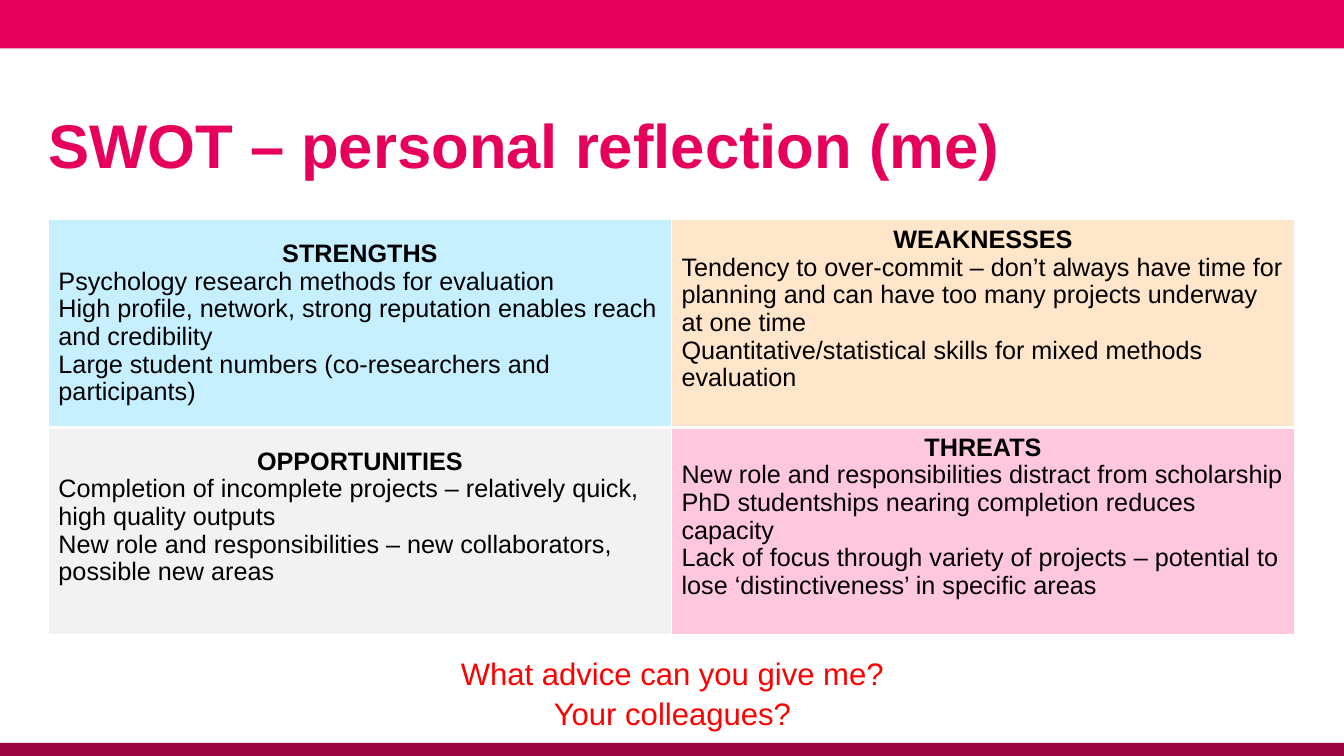
from dataclasses import dataclass

from lxml.etree import SubElement
from pptx import Presentation
from pptx.dml.color import RGBColor
from pptx.enum.shapes import MSO_SHAPE
from pptx.enum.text import MSO_ANCHOR, MSO_AUTO_SIZE, PP_ALIGN
from pptx.oxml.ns import qn
from pptx.slide import Slide
from pptx.table import _Cell
from pptx.util import Inches, Pt

COLOURS = {
    "pink": "E6005B",
    "maroon": "9E043D",
    "black": "000000",
    "white": "FFFFFF",
    "red": "FF0000",
    "blue tint": "C6F0FF",
    "orange tint": "FFE5C9",
    "grey tint": "F2F2F2",
    "pink tint": "FFC7DD",
}
SLIDE_WIDTH = 13.33
LEFT, CONTENT_WIDTH = 0.48, 12.36
QUADRANT_HEIGHT = 2.06


@dataclass
class Band:
    top: float
    height: float
    colour: str


@dataclass
class Quadrant:
    heading: str
    points: list[str]
    colour: str
    bottom_margin: float = 0.33


BANDS = [Band(0, 0.48, "pink"), Band(7.37, 0.13, "maroon")]
QUADRANTS = [
    Quadrant("STRENGTHS", [
        "Psychology research methods for evaluation",
        "High profile, network, strong reputation enables reach and credibility",
        "Large student numbers (co-researchers and participants)",
    ], "blue tint", 0.05),
    Quadrant("WEAKNESSES", [
        "Tendency to over-commit – don’t always have time for planning and can "
        "have too many projects underway at one time",
        "Quantitative/statistical skills for mixed methods evaluation",
    ], "orange tint"),
    Quadrant("OPPORTUNITIES", [
        "Completion of incomplete projects – relatively quick, high quality outputs",
        "New role and responsibilities – new collaborators, possible new areas",
    ], "grey tint"),
    Quadrant("THREATS", [
        "New role and responsibilities distract from scholarship",
        "PhD studentships nearing completion reduces capacity",
        "Lack of focus through variety of projects – potential to lose "
        "‘distinctiveness’ in specific areas",
    ], "pink tint"),
]


def rgb(name: str) -> RGBColor:
    return RGBColor.from_string(COLOURS[name])


def apply(target, formats: dict) -> None:
    for attribute, value in formats.items():
        setattr(target, attribute, value)


def format_text(paragraph, size: float, colour: str, bold: bool,
                align: PP_ALIGN, spacing: float) -> None:
    apply(paragraph, {"alignment": align, "line_spacing": spacing})
    apply(paragraph.font, {"name": "Arial", "size": Pt(size), "bold": bold})
    paragraph.font.color.rgb = rgb(colour)


def draw_band(slide: Slide, band: Band) -> None:
    bar = slide.shapes.add_shape(MSO_SHAPE.RECTANGLE, 0, Inches(band.top),
                                 Inches(SLIDE_WIDTH), Inches(band.height))
    bar.shadow.inherit = False
    bar.fill.solid()
    bar.fill.fore_color.rgb = rgb(band.colour)
    bar.line.fill.background()


def draw_title(slide: Slide, text: str) -> None:
    title = slide.shapes.title
    apply(title, {"left": Inches(LEFT), "top": Inches(0.88),
                  "width": Inches(CONTENT_WIDTH), "height": Inches(1.1)})
    apply(title.text_frame, {"text": text, "margin_left": 0, "word_wrap": True,
                             "auto_size": MSO_AUTO_SIZE.NONE,
                             "vertical_anchor": MSO_ANCHOR.MIDDLE})
    format_text(title.text_frame.paragraphs[0], 44, "pink", True, PP_ALIGN.LEFT, 1.0)


def draw_borders(cell: _Cell, widths: dict[str, float]) -> None:
    properties = cell._tc.get_or_add_tcPr()
    for side, width in widths.items():
        border = SubElement(properties, qn(f"a:ln{side}"), w=str(Pt(width)))
        fill = SubElement(border, qn("a:solidFill"))
        SubElement(fill, qn("a:srgbClr"), val=COLOURS["white"])


def fill_quadrant(cell: _Cell, quadrant: Quadrant, row: int) -> None:
    draw_borders(cell, {"L": 1, "R": 1, "T": 3 if row else 1, "B": 1 if row else 3})
    cell.fill.solid()
    cell.fill.fore_color.rgb = rgb(quadrant.colour)
    apply(cell, {"text": "\n".join([quadrant.heading, *quadrant.points]),
                 "vertical_anchor": MSO_ANCHOR.MIDDLE,
                 "margin_bottom": Inches(quadrant.bottom_margin)})
    for index, paragraph in enumerate(cell.text_frame.paragraphs):
        align = PP_ALIGN.LEFT if index else PP_ALIGN.CENTER
        format_text(paragraph, 18, "black", index == 0, align, 0.98)


def draw_swot(slide: Slide) -> None:
    swot = slide.shapes.add_table(2, 2, Inches(LEFT), Inches(2.18),
                                  Inches(CONTENT_WIDTH),
                                  Inches(2 * QUADRANT_HEIGHT)).table
    apply(swot, {"first_row": False, "horz_banding": False})
    for index, quadrant in enumerate(QUADRANTS):
        row, column = divmod(index, 2)
        fill_quadrant(swot.cell(row, column), quadrant, row)


def draw_questions(slide: Slide, text: str) -> None:
    questions = slide.shapes.add_textbox(Inches(2.43), Inches(6.56),
                                         Inches(8.48), Inches(0.7)).text_frame
    apply(questions, {"text": text, "word_wrap": True,
                      "vertical_anchor": MSO_ANCHOR.BOTTOM,
                      "margin_left": 0, "margin_right": 0,
                      "margin_top": 0, "margin_bottom": 0})
    for paragraph in questions.paragraphs:
        format_text(paragraph, 22.2, "red", False, PP_ALIGN.CENTER, 1.06)


def main() -> None:
    presentation = Presentation()
    apply(presentation, {"slide_width": Inches(SLIDE_WIDTH),
                         "slide_height": Inches(7.5)})
    slide = presentation.slides.add_slide(presentation.slide_layouts[5])
    for band in BANDS:
        draw_band(slide, band)
    draw_title(slide, "SWOT – personal reflection (me)")
    draw_swot(slide)
    draw_questions(slide, "What advice can you give me?\nYour colleagues?")
    presentation.save("out.pptx")


if __name__ == "__main__":
    main()
